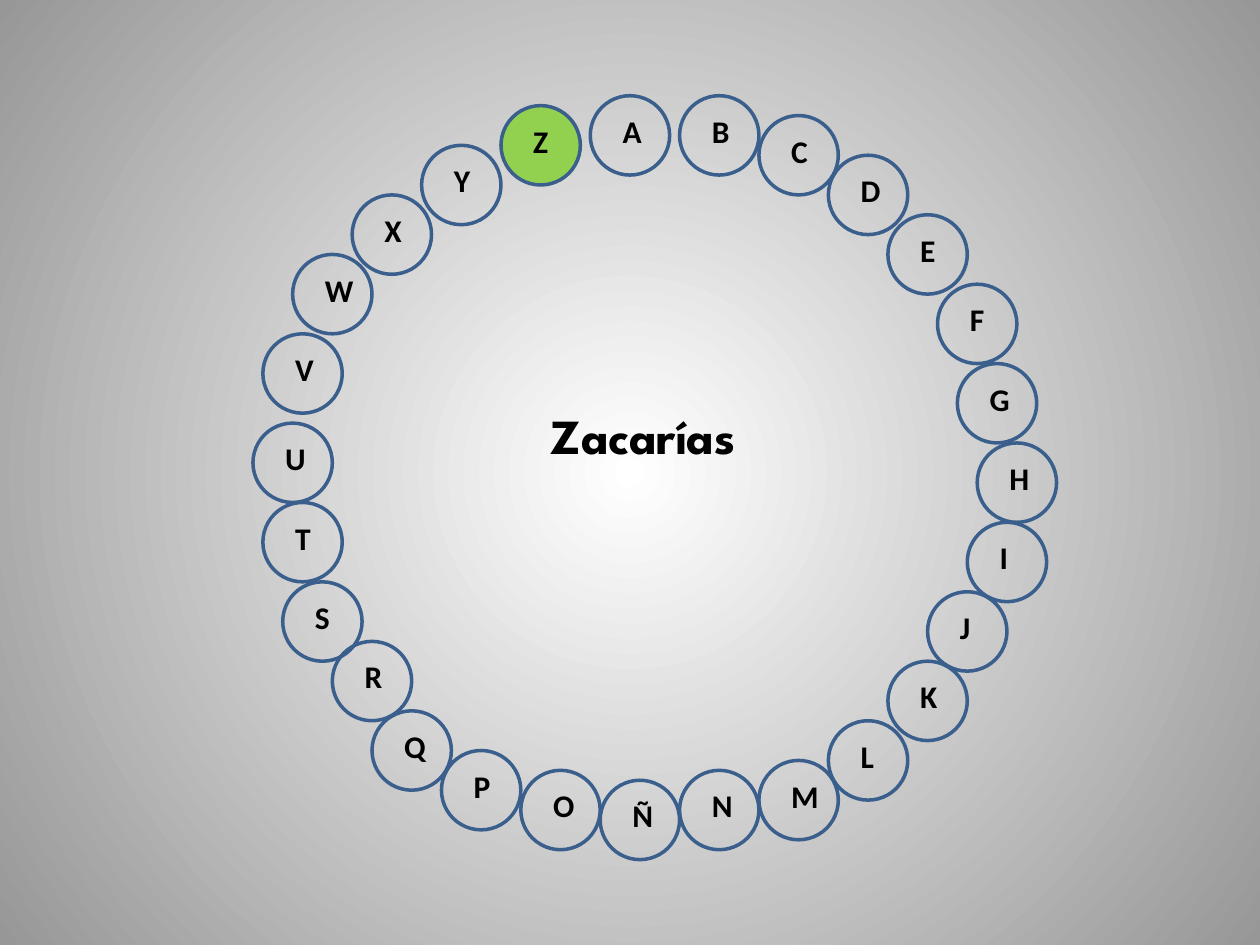
from pptx import Presentation
from pptx.dml.color import RGBColor
from pptx.enum.shapes import MSO_SHAPE
from pptx.enum.text import MSO_AUTO_SIZE, PP_ALIGN
from pptx.oxml import parse_xml
from pptx.oxml.ns import nsdecls
from pptx.util import Cm, Pt

OVAL = MSO_SHAPE.OVAL
GROW = MSO_AUTO_SIZE.SHAPE_TO_FIT_TEXT
LEFT, MID = PP_ALIGN.LEFT, PP_ALIGN.CENTER

SIZE = 1.6
RING = [
    ("A", 11.9, 1.93), ("B", 13.7, 1.93), ("C", 15.3, 2.33),
    ("D", 16.7, 3.13), ("E", 17.9, 4.33), ("F", 18.9, 5.73),
    ("G", 19.3, 7.33), ("H", 19.7, 8.93), ("I", 19.5, 10.53),
    ("J", 18.7, 11.93), ("K", 17.9, 13.33), ("L", 16.7, 14.53),
    ("M", 15.3, 15.33), ("N", 13.7, 15.53), ("Ñ", 12.1, 15.73),
    ("O", 10.5, 15.53), ("P", 8.9, 15.13), ("Q", 7.5, 14.33),
    ("R", 6.7, 12.93), ("S", 5.7, 11.73), ("T", 5.3, 10.13),
    ("U", 5.1, 8.53), ("V", 5.3, 6.73), ("W", 5.9, 5.13),
    ("X", 7.1, 3.93), ("Y", 8.5, 2.93), ("Z", 10.1, 2.13),
]


def tint(code):
    return RGBColor.from_string(code)


class Deck:
    ink, edge, lit = "000000", "3A5F8C", "92D050"

    def __init__(self):
        self.file = Presentation()
        self.file.slide_width = Cm(25.4)
        self.file.slide_height = Cm(19.05)
        self.slide = self.file.slides.add_slide(self.file.slide_layouts[6])

    def glow(self, core, rim):
        fill = self.slide.background.fill
        fill.gradient()
        for stop, code in zip(fill.gradient_stops, (core, rim)):
            stop.color.rgb = tint(code)
        line = self.slide.element.xpath(".//p:bg//a:lin")[0]
        line.getparent().replace(line, parse_xml(
            f'<a:path {nsdecls("a")} path="circle">'
            '<a:fillToRect l="50000" t="50000" r="50000" b="50000"/></a:path>'))

    def disc(self, x, y, code=None):
        disc = self.slide.shapes.add_shape(OVAL, Cm(x), Cm(y), Cm(SIZE), Cm(SIZE))
        disc.shadow.inherit = False
        if code:
            disc.fill.solid()
            disc.fill.fore_color.rgb = tint(code)
        else:
            disc.fill.background()
        disc.line.color.rgb = tint(self.edge)
        disc.line.width = Pt(2)

    def text(self, words, x, y, wide, high, size, face, align=LEFT):
        box = self.slide.shapes.add_textbox(Cm(x), Cm(y), Cm(wide), Cm(high))
        frame = box.text_frame
        frame.word_wrap = True
        frame.auto_size = GROW
        frame.text = words
        para = frame.paragraphs[0]
        para.alignment = align
        font = para.runs[0].font
        font.name, font.size, font.bold = face, Pt(size), True
        font.color.rgb = tint(self.ink)


def main():
    deck = Deck()
    deck.glow("FFFFFF", "979797")
    name = "Zacarías"
    for sign, x, y in RING:
        deck.disc(x, y, deck.lit if sign == name[0] else None)
        deck.text(sign, x + 0.4, y + 0.2, 0.8, 1.02, 18, "Calibri")
    deck.text(name, 7.26, 8.05, 11.4, 1.45, 28, "League Spartan", MID)
    deck.file.save("out.pptx")


if __name__ == "__main__":
    main()
